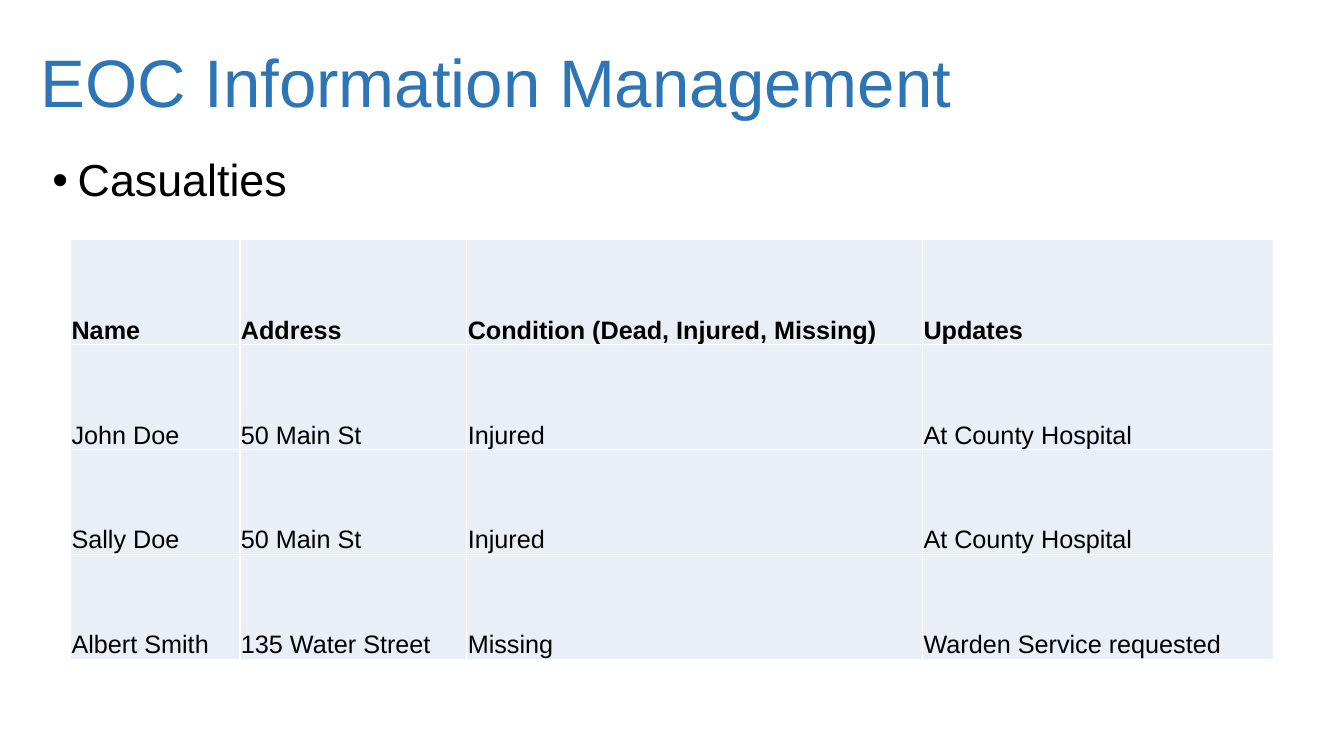
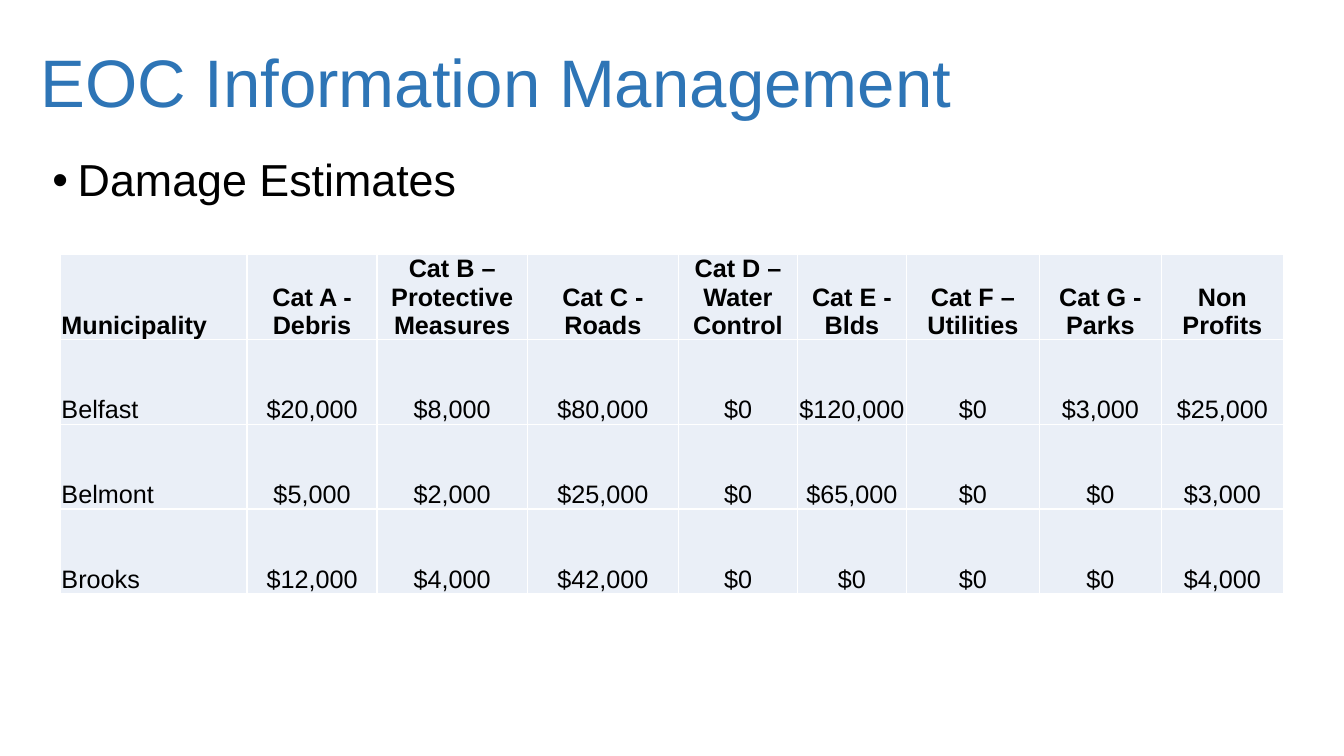
from lxml.etree import SubElement as Sub
from pptx import Presentation
from pptx.dml.color import RGBColor as RGB
from pptx.enum.text import MSO_ANCHOR as Anchor, MSO_AUTO_SIZE as Fit, PP_ALIGN as Align
from pptx.oxml.ns import qn
from pptx.util import Inches, Pt

WIDE, HIGH = 13.33, 7.5
FONT = "Arial"
HUES = {"title": "2E75B6", "text": "000000", "cell": "EAEFF7", "rule": "FFFFFF"}
TITLE = "EOC Information Management"
TITLE_BOX = (0.3, 0.32, 12.81, 1.06)

PAGES = [
    {
        "topic": "Casualties",
        "list_box": (0.42, 1.52, 2.58, 0.85),
        "spot": (0.7, 2.38),
        "cols": [1.68, 2.25, 4.52, 3.48],
        "step": 1.04,
        "align": Align.LEFT,
        "rows": [
            ["Name", "Address", "Condition (Dead, Injured, Missing)", "Updates"],
            ["John Doe", "50 Main St", "Injured", "At County Hospital"],
            ["Sally Doe", "50 Main St", "Injured", "At County Hospital"],
            ["Albert Smith", "135 Water Street", "Missing", "Warden Service requested"],
        ],
    },
    {
        "topic": "Damage Estimates",
        "list_box": (0.42, 1.52, 4.62, 0.85),
        "spot": (0.6, 2.52),
        "cols": [1.85, 1.29, 1.49, 1.5, 1.18, 1.08, 1.32, 1.21, 1.21],
        "step": 0.84,
        "align": Align.CENTER,
        "rows": [
            ["Municipality", "Cat A - Debris", "Cat B – Protective Measures",
             "Cat C - Roads", "Cat D – Water Control", "Cat E - Blds",
             "Cat F – Utilities", "Cat G - Parks", "Non Profits"],
            ["Belfast", "$20,000", "$8,000", "$80,000", "$0", "$120,000", "$0",
             "$3,000", "$25,000"],
            ["Belmont", "$5,000", "$2,000", "$25,000", "$0", "$65,000", "$0",
             "$0", "$3,000"],
            ["Brooks", "$12,000", "$4,000", "$42,000", "$0", "$0", "$0", "$0",
             "$4,000"],
        ],
    },
]


def write(frame, text, size=18, hue="text", bold=False, align=Align.LEFT,
          anchor=Anchor.TOP, line=1.0, before=0):
    frame.word_wrap = True
    frame.vertical_anchor = anchor
    para = frame.paragraphs[0]
    para.alignment = align
    para.line_spacing = line
    para.space_before = Pt(before)
    run = para.add_run()
    run.text = text
    font = run.font
    font.name, font.size, font.bold = FONT, Pt(size), bold
    font.color.rgb = RGB.from_string(HUES[hue])
    return para


def place(shape, box):
    shape.left, shape.top, shape.width, shape.height = map(Inches, box)
    shape.text_frame.auto_size = Fit.NONE


def add_title(slide, box):
    shape = slide.shapes.title
    place(shape, box)
    write(shape.text_frame, TITLE, size=48, hue="title",
          anchor=Anchor.MIDDLE, line=0.9)


def add_topic(slide, text, box):
    shape = slide.placeholders[1]
    place(shape, box)
    para = write(shape.text_frame, text, size=32, line=0.9, before=10)
    props = para._p.get_or_add_pPr()
    props.set("marL", str(Inches(0.25)))
    props.set("indent", str(-Inches(0.25)))
    Sub(props, qn("a:buFont"), typeface=FONT)
    Sub(props, qn("a:buChar"), char="•")


def paint(cell):
    """Draw the four borders, then the fill, as the schema orders them."""
    props = cell._tc.get_or_add_tcPr()
    for side in "LRTB":
        edge = Sub(props, qn(f"a:ln{side}"), w=str(Pt(1)))
        Sub(Sub(edge, qn("a:solidFill")), qn("a:srgbClr"), val=HUES["rule"])
    cell.fill.solid()
    cell.fill.fore_color.rgb = RGB.from_string(HUES["cell"])


def add_grid(slide, spot, cols, step, rows, align):
    box = (*spot, sum(cols), step * len(rows))
    table = slide.shapes.add_table(len(rows), len(cols), *map(Inches, box)).table
    table.first_row = table.horz_banding = False
    for col, width in zip(table.columns, cols):
        col.width = Inches(width)
    for r, row in enumerate(rows):
        table.rows[r].height = Inches(step)
        for c, text in enumerate(row):
            cell = table.cell(r, c)
            paint(cell)
            cell.margin_left = cell.margin_right = cell.margin_top = Inches(0.01)
            cell.margin_bottom = 0
            cell.vertical_anchor = Anchor.BOTTOM
            write(cell.text_frame, text, bold=r == 0, anchor=None,
                  align=align if c else Align.LEFT)


def add_page(deck, page):
    slide = deck.slides.add_slide(deck.slide_layouts[1])
    add_title(slide, TITLE_BOX)
    add_topic(slide, page["topic"], page["list_box"])
    add_grid(slide, page["spot"], page["cols"], page["step"], page["rows"],
             page["align"])


def main():
    deck = Presentation()
    deck.slide_width, deck.slide_height = Inches(WIDE), Inches(HIGH)
    for page in PAGES:
        add_page(deck, page)
    deck.save("out.pptx")


if __name__ == "__main__":
    main()
